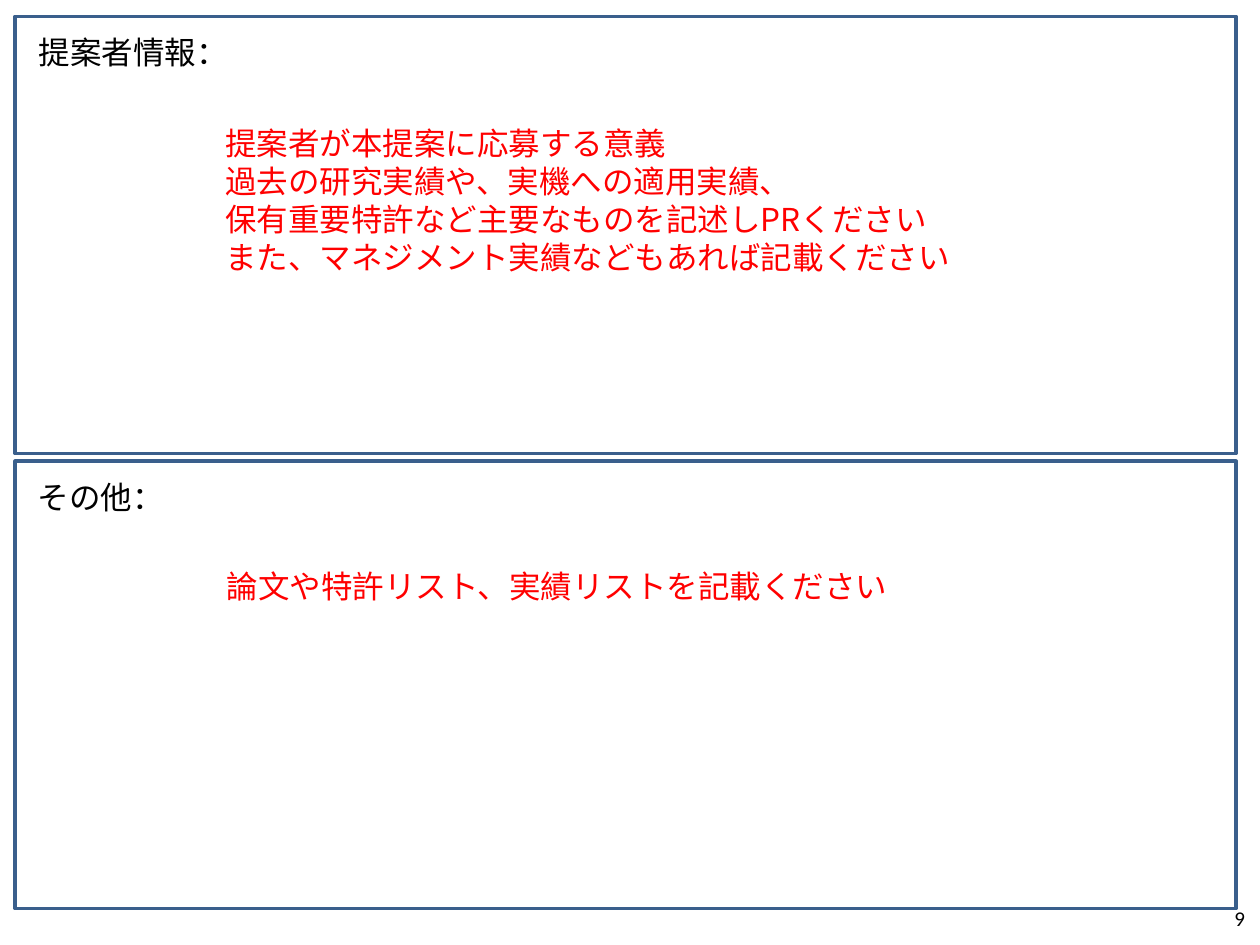
from pptx import Presentation
from pptx.dml.color import RGBColor
from pptx.enum.shapes import MSO_SHAPE
from pptx.enum.text import MSO_ANCHOR, PP_ALIGN
from pptx.oxml.ns import qn
from pptx.util import Inches, Pt

RECTANGLE = MSO_SHAPE.RECTANGLE
TOP, MIDDLE = MSO_ANCHOR.TOP, MSO_ANCHOR.MIDDLE
LEFT, RIGHT = PP_ALIGN.LEFT, PP_ALIGN.RIGHT

BLACK = RGBColor(0x00, 0x00, 0x00)
RED = RGBColor(0xFF, 0x00, 0x00)
FRAME_BLUE = RGBColor(0x3A, 0x5F, 0x8C)
JAPANESE_FONT = "Noto Sans CJK JP"
NUMBER_FONT = "Calibri"

# Positions are left, top, width, height in inches.
SECTIONS = [
    {
        "frame": (0.12, 0.13, 9.69, 3.47),
        "heading": "提案者情報：",
        "heading_at": (0.21, 0.21, 5.18, 0.4),
        "guidance": [
            "提案者が本提案に応募する意義",
            "過去の研究実績や、実機への適用実績、",
            "保有重要特許など主要なものを記述しPRください",
            "また、マネジメント実績などもあれば記載ください",
        ],
        "guidance_at": (1.69, 0.93, 6.01, 1.31),
    },
    {
        "frame": (0.12, 3.66, 9.69, 3.55),
        "heading": "その他：",
        "heading_at": (0.2, 3.74, 1.21, 0.4),
        "guidance": ["論文や特許リスト、実績リストを記載ください"],
        "guidance_at": (1.7, 4.45, 5.5, 0.4),
    },
]
PAGE_NUMBER = "9"
PAGE_NUMBER_AT = (7.65, 7.09, 2.33, 0.4)


def add_text(page, lines, at, size=18, font=JAPANESE_FONT, color=BLACK,
             align=LEFT, anchor=TOP, wrap=False, spacing=Pt(21.7)):
    box = page.shapes.add_textbox(*map(Inches, at))
    frame = box.text_frame
    frame.word_wrap = wrap
    frame.vertical_anchor = anchor
    for index, line in enumerate(lines):
        para = frame.add_paragraph() if index else frame.paragraphs[0]
        para.alignment = align
        para.line_spacing = spacing
        span = para.add_run()
        span.text = line
        span.font.size = Pt(size)
        span.font.name = font
        span.font.color.rgb = color
        east_asian = span.font._element.makeelement(qn("a:ea"), {"typeface": font})
        span.font._element.append(east_asian)


def add_frame(page, at):
    frame = page.shapes.add_shape(RECTANGLE, *map(Inches, at))
    frame.shadow.inherit = False
    frame.fill.background()
    frame.line.color.rgb = FRAME_BLUE
    frame.line.width = Pt(2)


def main():
    deck = Presentation()
    deck.slide_width, deck.slide_height = Inches(10), Inches(7.5)
    page = deck.slides.add_slide(deck.slide_layouts[6])
    for section in SECTIONS:
        add_frame(page, section["frame"])
        add_text(page, [section["heading"]], section["heading_at"])
        add_text(page, section["guidance"], section["guidance_at"], color=RED)
    add_text(page, [PAGE_NUMBER], PAGE_NUMBER_AT, size=12, font=NUMBER_FONT,
             align=RIGHT, anchor=MIDDLE, wrap=True, spacing=1.0)
    deck.save("out.pptx")


if __name__ == "__main__":
    main()
